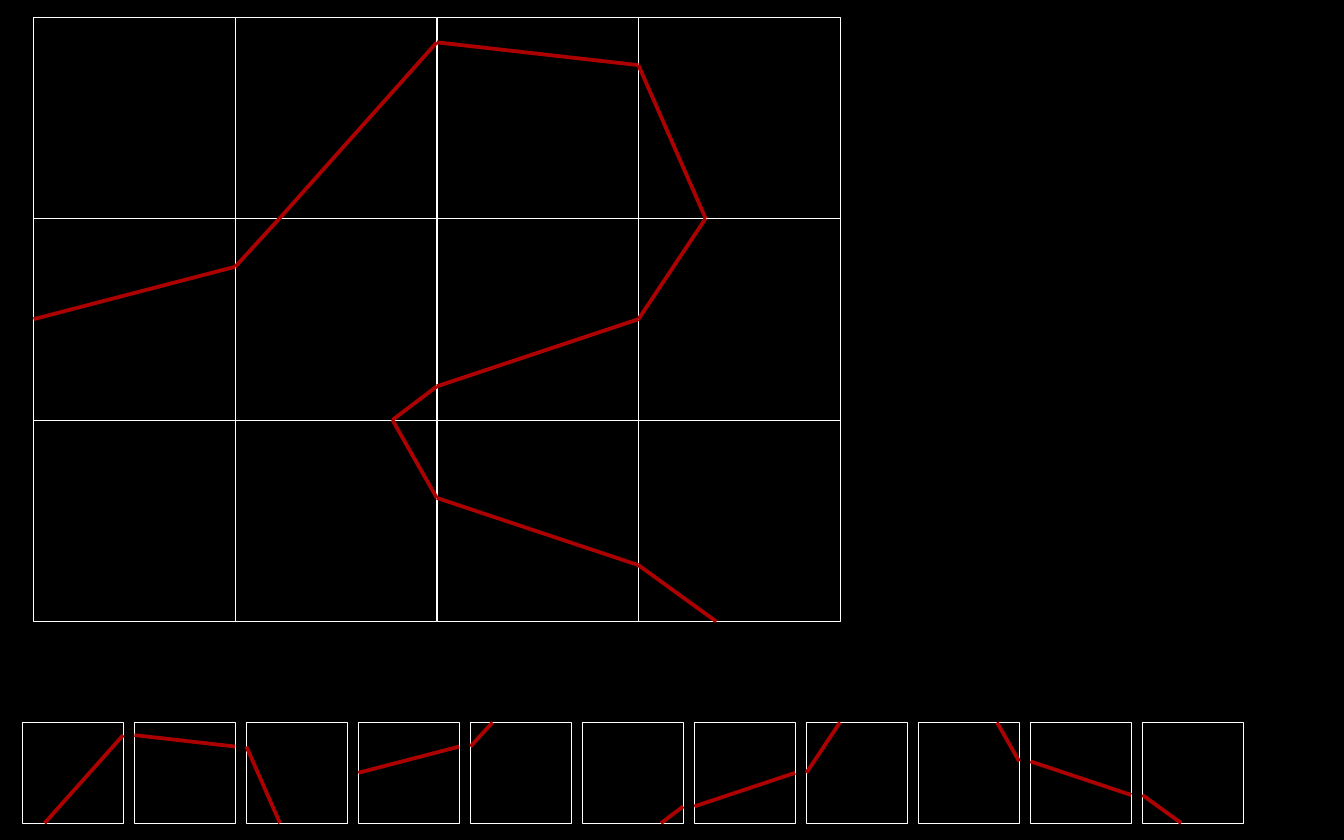
from dataclasses import dataclass
from itertools import pairwise
from math import dist

from lxml import etree
from pptx import Presentation
from pptx.dml.color import RGBColor
from pptx.enum.shapes import MSO_CONNECTOR, MSO_SHAPE
from pptx.oxml.ns import qn
from pptx.util import Inches, Pt

RECTANGLE = MSO_SHAPE.RECTANGLE
STRAIGHT = MSO_CONNECTOR.STRAIGHT

BLACK, WHITE, RED = "000000", "FFFFFF", "AD0101"
CELL = 1.5
COLUMNS, ROWS = 4, 3
GRID_LEFT, GRID_TOP = 0.25, 1 / 8
TILE = CELL / 2
TILE_LEFT, TILE_TOP, TILE_STEP = 1 / 6, 5 + 3 / 8, 5 / 6
COURSE = [
    (0, 2.25), (1.5, 1.86), (1.83, 1.5), (3, 0.19), (4.5, 0.36), (5, 1.5),
    (4.5, 2.25), (3, 2.75), (2.67, 3), (3, 3.58), (4.5, 4.08), (5.08, 4.5),
]
SIDE_MIDDLES = [(0.5, 0), (0, 0.5), (0.5, 1), (1, 0.5)]


@dataclass(frozen=True)
class Stretch:
    row: int
    column: int
    start: tuple[float, float]
    end: tuple[float, float]


def color(value: str) -> RGBColor:
    return RGBColor.from_string(value)


def split_course(points: list[tuple[float, float]]) -> list[Stretch]:
    stretches = []
    for (x1, y1), (x2, y2) in pairwise(points):
        column = int((x1 + x2) / 2 // CELL)
        row = int((y1 + y2) / 2 // CELL)
        start = (x1 / CELL - column, y1 / CELL - row)
        end = (x2 / CELL - column, y2 / CELL - row)
        stretches.append(Stretch(row, column, start, end))
    return stretches


def draw_square(shapes, left: float, top: float, size: float):
    square = shapes.add_shape(
        RECTANGLE, Inches(left), Inches(top), Inches(size), Inches(size)
    )
    square.shadow.inherit = False
    square.fill.background()
    square.line.color.rgb = color(WHITE)
    square.line.width = Pt(0.25)
    return square


def draw_stretch(shapes, stretch: Stretch, square, left: float, top: float, size: float) -> None:
    (x1, y1), (x2, y2) = stretch.start, stretch.end
    connector = shapes.add_connector(
        STRAIGHT,
        Inches(left + x1 * size), Inches(top + y1 * size),
        Inches(left + x2 * size), Inches(top + y2 * size),
    )
    connector.line.color.rgb = color(RED)
    connector.line.width = Pt(2)
    properties = connector._element.find(qn("p:spPr"))
    etree.SubElement(properties, qn("a:effectLst"))
    for side, middle in enumerate(SIDE_MIDDLES):
        if dist(stretch.start, middle) < 0.001:
            connector.begin_connect(square, side)
        if dist(stretch.end, middle) < 0.001:
            connector.end_connect(square, side)


def draw_grid(shapes, stretches: list[Stretch]) -> None:
    cells = {}
    for row in range(ROWS):
        for column in range(COLUMNS):
            left, top = GRID_LEFT + column * CELL, GRID_TOP + row * CELL
            cells[row, column] = draw_square(shapes, left, top, CELL)
    for stretch in stretches:
        left = GRID_LEFT + stretch.column * CELL
        top = GRID_TOP + stretch.row * CELL
        cell = cells[stretch.row, stretch.column]
        draw_stretch(shapes, stretch, cell, left, top, CELL)


def draw_tiles(shapes, stretches: list[Stretch]) -> None:
    ordered = sorted(stretches, key=lambda stretch: (stretch.row, stretch.column))
    for index, stretch in enumerate(ordered):
        left = TILE_LEFT + index * TILE_STEP
        members = shapes.add_group_shape().shapes
        tile = draw_square(members, left, TILE_TOP, TILE)
        draw_stretch(members, stretch, tile, left, TILE_TOP, TILE)


def main() -> None:
    presentation = Presentation()
    presentation.slide_width = Inches(10)
    presentation.slide_height = Inches(6.25)
    slide = presentation.slides.add_slide(presentation.slide_layouts[6])
    slide.background.fill.solid()
    slide.background.fill.fore_color.rgb = color(BLACK)
    stretches = split_course(COURSE)
    draw_grid(slide.shapes, stretches)
    draw_tiles(slide.shapes, stretches)
    presentation.save("out.pptx")


if __name__ == "__main__":
    main()
